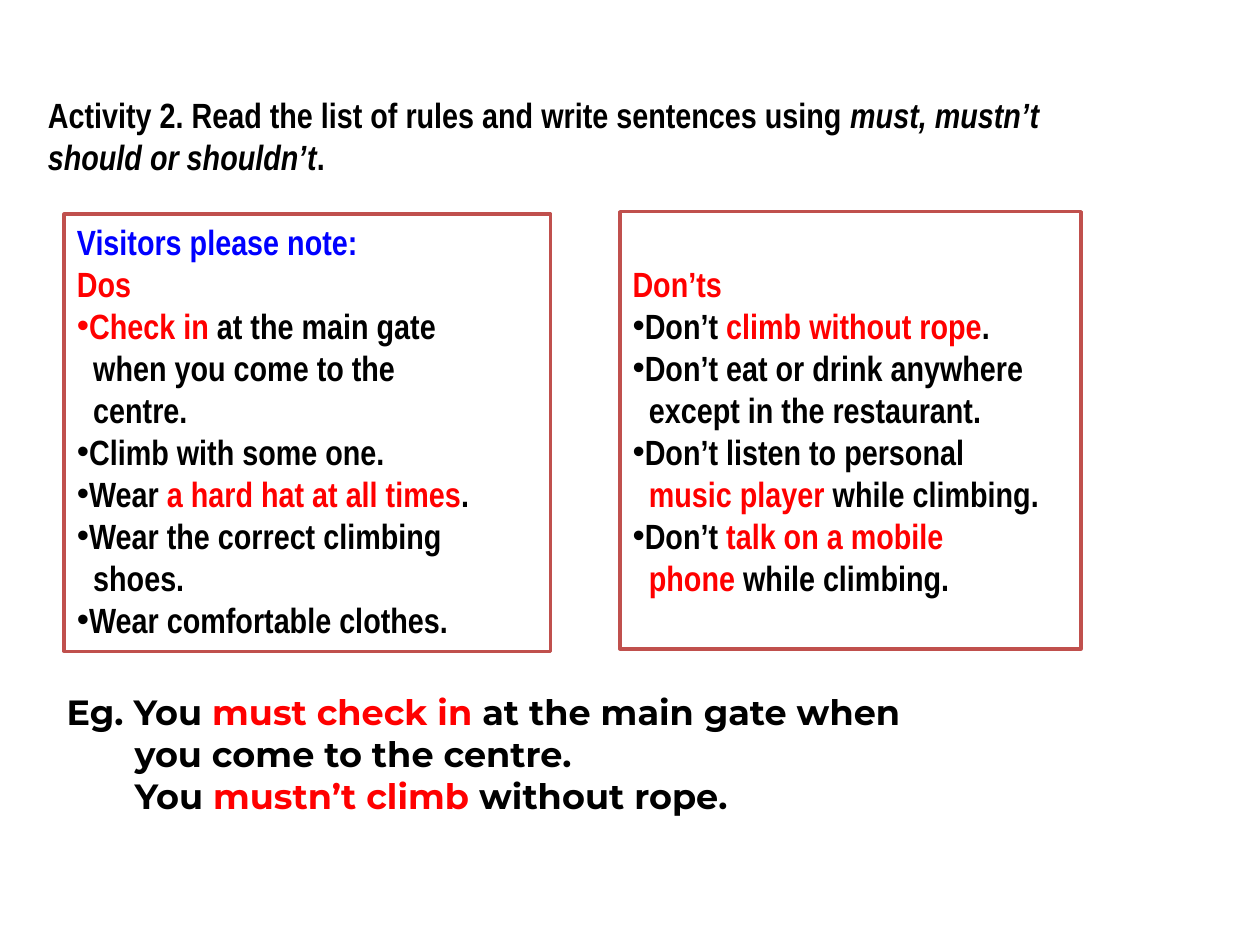
"""Build a slide of climbing-centre rules for practising must, mustn't, should and shouldn't."""
from lxml.etree import SubElement
from pptx import Presentation
from pptx.dml.color import RGBColor
from pptx.enum.text import MSO_ANCHOR, MSO_AUTO_SIZE, PP_ALIGN
from pptx.oxml.ns import qn
from pptx.util import Inches, Pt

BLACK = RGBColor(0x00, 0x00, 0x00)
RED = RGBColor(0xFF, 0x00, 0x00)
BLUE = RGBColor(0x00, 0x00, 0xFF)
BRICK = RGBColor(0xC0, 0x50, 0x4D)
WHITE = RGBColor(0xFF, 0xFF, 0xFF)

deck = Presentation()
deck.slide_width, deck.slide_height = Inches(10), Inches(7.5)
column, row = deck.slide_width // 100, deck.slide_height // 75
slide = deck.slides.add_slide(deck.slide_layouts[3])
activity, dos, donts = slide.placeholders
example = slide.shapes.add_textbox(0, 0, column, row)

FRAME = {"word_wrap": True, "auto_size": MSO_AUTO_SIZE.NONE, "vertical_anchor": MSO_ANCHOR.TOP}
PARAGRAPH = {"alignment": PP_ALIGN.LEFT, "space_before": Pt(0), "line_spacing": 1.0}
FONT = {"size": Pt(20), "bold": True}
HANG = Inches(0.13)
EG_HANG = Inches(0.54)


def place(shape, left, top, width, height, top_inset=0.05):
    shape.left, shape.top = int(left * column), int(top * row)
    shape.width, shape.height = int(width * column), int(height * row)
    shape.text_frame.margin_top = Inches(top_inset)


def write(shape, typeface, lines):
    frame = shape.text_frame
    for name, value in FRAME.items():
        setattr(frame, name, value)
    for number, (bullet, indent, *runs) in enumerate(lines):
        paragraph = frame.add_paragraph() if number else frame.paragraphs[0]
        for name, value in PARAGRAPH.items():
            setattr(paragraph, name, value)
        properties = paragraph._p.get_or_add_pPr()
        properties.set("marL", str(indent))
        properties.set("indent", "0")
        if bullet:
            SubElement(properties, qn("a:buChar"), char=bullet)
        else:
            SubElement(properties, qn("a:buNone"))
        for text, colour, *italic in runs:
            run = paragraph.add_run()
            run.text = text
            for name, value in FONT.items():
                setattr(run.font, name, value)
            run.font.name = typeface
            run.font.italic = bool(italic)
            run.font.color.rgb = colour


place(activity, 2.8, 6.9, 85, 7.7)
place(dos, 5.1, 17, 38.6, 34.7)
place(donts, 49.2, 16.8, 36.6, 34.7, top_inset=0.4)
place(example, 4.3, 54.3, 100, 11.1)

for rules in (dos, donts):
    rules.fill.solid()
    rules.fill.fore_color.rgb = WHITE
    rules.line.color.rgb = BRICK
    rules.line.width = Pt(2)

write(activity, "Arial Narrow", [
    ("", 0, ("Activity 2. Read the list of rules and write sentences using ", BLACK),
     ("must, mustn’t should or shouldn’t", BLACK, "italic"), (".", BLACK)),
])
write(dos, "Arial Narrow", [
    ("", 0, ("Visitors please note:", BLUE)),
    ("", 0, ("Dos", RED)),
    ("•", 0, ("Check in ", RED), ("at the main gate", BLACK)),
    ("", HANG, ("when you come to the", BLACK)),
    ("", HANG, ("centre.", BLACK)),
    ("•", 0, ("Climb with some one.", BLACK)),
    ("•", 0, ("Wear ", BLACK), ("a hard hat at all times", RED), (".", BLACK)),
    ("•", 0, ("Wear the correct climbing", BLACK)),
    ("", HANG, ("shoes.", BLACK)),
    ("•", 0, ("Wear comfortable clothes.", BLACK)),
])
write(donts, "Arial Narrow", [
    ("", 0, ("Don’ts", RED)),
    ("•", 0, ("Don’t ", BLACK), ("climb without rope", RED), (".", BLACK)),
    ("•", 0, ("Don’t eat or drink anywhere", BLACK)),
    ("", HANG, ("except in the restaurant.", BLACK)),
    ("•", 0, ("Don’t listen to personal", BLACK)),
    ("", HANG, ("music player ", RED), ("while climbing.", BLACK)),
    ("•", 0, ("Don’t ", BLACK), ("talk on a mobile", RED)),
    ("", HANG, ("phone ", RED), ("while climbing.", BLACK)),
])
write(example, "Montserrat", [
    ("", 0, ("Eg. You ", BLACK), ("must check in ", RED), ("at the main gate when", BLACK)),
    ("", EG_HANG, ("you come to the centre.", BLACK)),
    ("", EG_HANG, ("You ", BLACK), ("mustn’t climb ", RED), ("without rope.", BLACK)),
])

deck.save("out.pptx")
